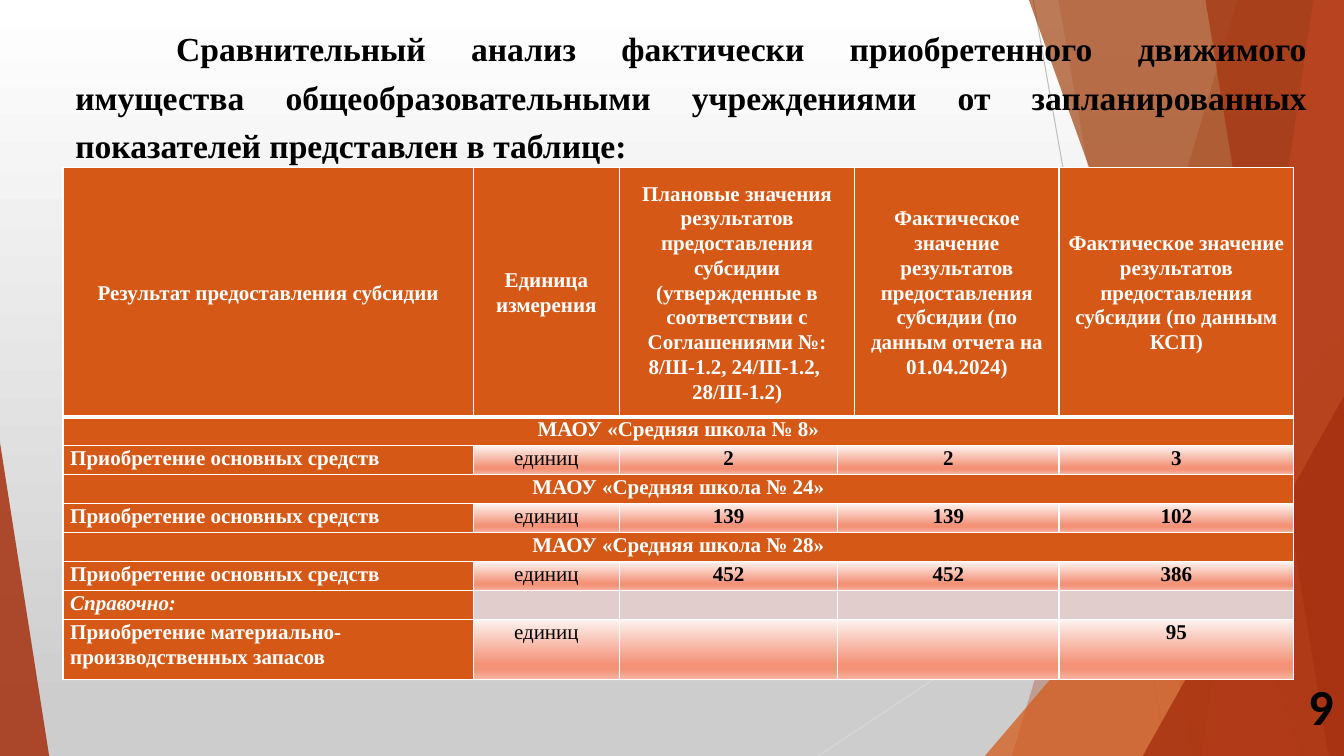
from lxml import etree
from pptx import Presentation
from pptx import util as u
from pptx.dml import color
from pptx.enum import shapes, text
from pptx.oxml import ns, parse_xml

COLORS = {
    "black": "000000", "white": "FFFFFF", "orange": "D55816", "rust": "A5300F",
    "brown": "A04210", "coral": "EE6E4A", "pale": "E1CDCC",
    "axis": "BFBFBF", "ray": "D9D9D9",
}
BACKDROP = [(0, "FFFFFF"), (94, "CDCDCD")]
GLOW = [(0, "FEF3F0"), (60, "F5A48E"), (74, "F39277"), (83, "F39277"), (100, "F7B6A4")]
WIDTH, HEIGHT = 33.87, 19.05
SERIF = "Times New Roman"


class Deck:
    """Holds the slide and the style of everything drawn on it."""

    def __init__(self):
        self.show = Presentation()
        self.show.slide_width, self.show.slide_height = u.Cm(WIDTH), u.Cm(HEIGHT)
        self.slide = self.show.slides.add_slide(self.show.slide_layouts[6])

    def rgb(self, name):
        return color.RGBColor.from_string(COLORS[name])

    def gradient(self, owner, fill, stops):
        fill.solid()
        fill.fore_color.rgb = self.rgb("white")
        marks = "".join(
            f'<a:gs pos="{place * 1000}"><a:srgbClr val="{tone}"/></a:gs>'
            for place, tone in stops)
        solid = owner.find(".//" + ns.qn("a:solidFill") if owner is self.slide.element
                           else ns.qn("a:solidFill"))
        solid.getparent().replace(solid, parse_xml(
            f'<a:gradFill {ns.nsdecls("a")} rotWithShape="1"><a:gsLst>{marks}</a:gsLst>'
            '<a:lin ang="5400000" scaled="0"/></a:gradFill>'))

    def backdrop(self, stops):
        self.gradient(self.slide.element, self.slide.background.fill, stops)

    def line(self, start, end, tone):
        ray = self.slide.shapes.add_connector(
            shapes.MSO_CONNECTOR.STRAIGHT, *map(u.Cm, start + end))
        ray.line.color.rgb, ray.line.width = self.rgb(tone), u.Pt(0.75)
        etree.SubElement(ray.element.spPr, ns.qn("a:effectLst"))

    def tint(self, facet, tone, opacity):
        facet.shadow.inherit = False
        facet.fill.solid()
        facet.fill.fore_color.rgb = self.rgb(tone)
        etree.SubElement(facet.element.spPr.find(".//" + ns.qn("a:srgbClr")),
                         ns.qn("a:alpha"), val=str(opacity * 1000))
        facet.line.fill.background()

    def band(self, top, bottom, tone, opacity):
        outline = self.slide.shapes.build_freeform(u.Cm(top), 0)
        outline.add_line_segments(
            [(u.Cm(x), u.Cm(y)) for x, y in ((WIDTH, 0), (WIDTH, HEIGHT), (bottom, HEIGHT))])
        self.tint(outline.convert_to_shape(), tone, opacity)

    def triangle(self, box, peak, tone, opacity):
        facet = self.slide.shapes.add_shape(
            shapes.MSO_SHAPE.ISOSCELES_TRIANGLE, *map(u.Cm, box))
        facet.adjustments[0] = peak
        self.tint(facet, tone, opacity)

    def style(self, paragraph, size, tone, align, bold=True, italic=False,
              face=SERIF, spacing=1.0):
        paragraph.alignment, paragraph.line_spacing = align, spacing
        font = paragraph.font
        font.name, font.size, font.bold, font.italic = face, u.Pt(size), bold, italic
        font.color.rgb = self.rgb(tone)

    def text(self, box, words, size, align, anchor=text.MSO_ANCHOR.TOP,
             face=SERIF, spacing=1.0, left=0, indent=0):
        frame = self.slide.shapes.add_textbox(*map(u.Cm, box)).text_frame
        frame.word_wrap, frame.vertical_anchor = True, anchor
        paragraph = frame.paragraphs[0]
        paragraph.text = words
        if indent:
            props = paragraph._p.get_or_add_pPr()
            props.set("marL", str(u.Cm(left)))
            props.set("indent", str(u.Cm(indent)))
        self.style(paragraph, size, "black", align, face=face, spacing=spacing)

    def cell(self, cell, words, fill, top=1, bottom=1, middle=False, **look):
        cell.margin_left = cell.margin_right = u.Cm(0.18)
        cell.margin_top = cell.margin_bottom = 0
        cell.vertical_anchor = text.MSO_ANCHOR.MIDDLE if middle else text.MSO_ANCHOR.TOP
        cell.text = words
        for paragraph in cell.text_frame.paragraphs:
            self.style(paragraph, 15, spacing=1.07, **look)
        props = cell._tc.get_or_add_tcPr()
        for side, width in (("L", 1), ("R", 1), ("T", top), ("B", bottom)):
            props.append(parse_xml(
                f'<a:ln{side} {ns.nsdecls("a")} w="{u.Pt(width)}"><a:solidFill>'
                f'<a:srgbClr val="{COLORS["white"]}"/></a:solidFill></a:ln{side}>'))
        if fill == "glow":
            self.gradient(props, cell.fill, GLOW)
        else:
            cell.fill.solid()
            cell.fill.fore_color.rgb = self.rgb(fill)

    def table(self, corner, widths, heights, rows):
        grid = self.slide.shapes.add_table(
            len(heights), len(widths), *map(u.Cm, corner + (sum(widths), sum(heights)))).table
        for column, width in zip(grid.columns, widths):
            column.width = u.Cm(width)
        for row, height in zip(grid.rows, heights):
            row.height = u.Cm(height)
        center, left = text.PP_ALIGN.CENTER, text.PP_ALIGN.LEFT
        for r, words in enumerate(rows):
            header, school = r == 0, len(words) == 1
            note = words[0] == "Справочно:"
            joined = (0, 5) if school else (2, 3) if header else (3, 4)
            grid.cell(r, joined[0]).merge(grid.cell(r, joined[1]))
            values = iter(words)
            for c in range(len(widths)):
                hidden = grid.cell(r, c).is_spanned
                label = header or school or c == 0
                self.cell(
                    grid.cell(r, c), "" if hidden else next(values),
                    "orange" if label else "pale" if note else "glow",
                    top=3 if r == 1 else 1, bottom=3 if header else 1, middle=header,
                    tone="white" if label else "black",
                    align=center if header or school or c else left,
                    bold=label or c > 1, italic=note and c == 0)


def main():
    deck = Deck()
    deck.backdrop(BACKDROP)
    deck.line((26.04, 0), (29.41, HEIGHT), "axis")
    deck.line((WIDTH, 10.24), (20.62, HEIGHT), "ray")
    deck.band(31.19, 25.5, "rust", 30)
    deck.band(26.67, 30.05, "rust", 20)
    deck.triangle((24.82, 8.46, 9.05, 10.59), 1, "orange", 72)
    deck.band(25.93, 32.79, "brown", 70)
    deck.band(33.1, 30.28, "coral", 70)
    deck.band(30.38, 33.48, "rust", 65)
    deck.triangle((28.8, 9.98, 5.07, 9.07), 1, "rust", 80)
    deck.triangle((0, 11.15, 1.24, 7.9), 0, "rust", 85)
    deck.text((0.69, 0.38, 32.49, 18.49),
              "Сравнительный анализ фактически приобретенного движимого имущества "
              "общеобразовательными учреждениями от запланированных показателей "
              "представлен в таблице:",
              24, text.PP_ALIGN.JUSTIFY, spacing=1.2, left=0.96, indent=2.54)
    deck.text((31.75, 16.48, 2.11, 2.57), "9", 36, text.PP_ALIGN.RIGHT,
              anchor=text.MSO_ANCHOR.MIDDLE, face="Calibri")

    assets, unit = "Приобретение основных средств", "единиц"
    rows = [[
        "Результат предоставления субсидии",
        "Единица измерения",
        "Плановые значения результатов предоставления субсидии (утвержденные "
        "в соответствии с Соглашениями №: 8/Ш-1.2, 24/Ш-1.2, \n28/Ш-1.2)",
        "Фактическое значение результатов предоставления субсидии "
        "(по данным отчета на 01.04.2024)",
        "Фактическое значение результатов предоставления субсидии (по данным КСП)",
    ]]
    for school, plan, reported, audited in ((8, 2, 2, 3), (24, 139, 139, 102),
                                            (28, 452, 452, 386)):
        rows.append([f"МАОУ «Средняя школа № {school}»"])
        rows.append([assets, unit, str(plan), str(reported), str(audited)])
    rows.append(["Справочно:", "", "", "", ""])
    rows.append(["Приобретение материально-производственных запасов", unit, "", "", "95"])
    deck.table((1.59, 4.23), (10.34, 3.68, 5.5, 0.43, 5.15, 5.91),
               [6.27] + [0.73] * 7 + [1.52], rows)
    deck.show.save("out.pptx")


if __name__ == "__main__":
    main()
